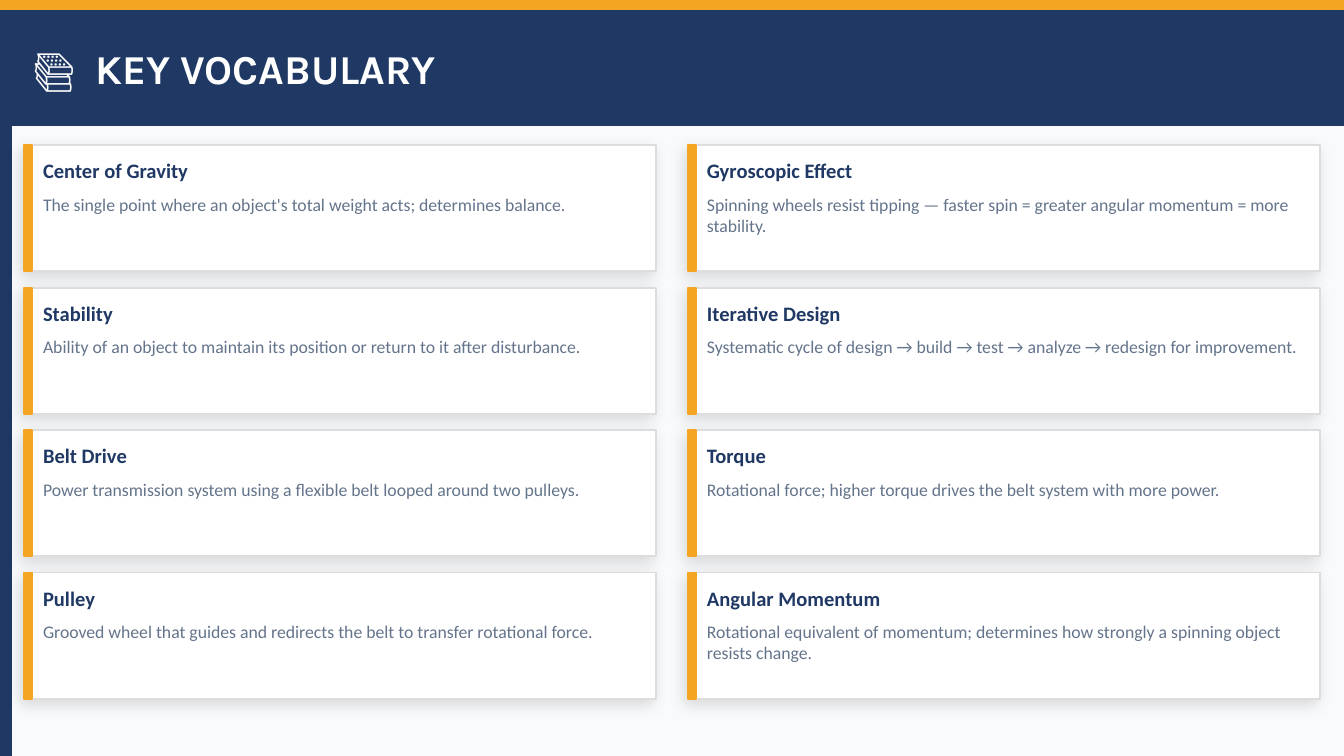
import pptx
import pptx.util
import pptx.dml.color
import pptx.enum.shapes
import pptx.enum.text
import pptx.oxml
import pptx.oxml.ns

# The slide is a grid of square cells, 100 columns by 56.25 rows.
COLS, ROWS = 100, 56.25
CELL = pptx.util.Inches(0.1)
EDGE = 0.8

COLORS = {
    "page": "F8FAFC", "navy": "1F3864", "amber": "F4A522", "white": "FFFFFF",
    "border": "DDDDDD", "slate": "64748B", "shadow": "000000",
}
FORMATS = {
    "title": {"name": "Karla", "size": pptx.util.Pt(22), "bold": True},
    "term": {"name": "Calibri", "size": pptx.util.Pt(11), "bold": True},
    "meaning": {"name": "Calibri", "size": pptx.util.Pt(9.5), "bold": False},
}
TEXT_COLORS = {"title": "white", "term": "navy", "meaning": "slate"}

# One list for each column of cards, from top to bottom.
VOCABULARY = [
    [
        ("Center of Gravity",
         "The single point where an object's total weight acts; determines balance."),
        ("Stability",
         "Ability of an object to maintain its position or return to it after disturbance."),
        ("Belt Drive",
         "Power transmission system using a flexible belt looped around two pulleys."),
        ("Pulley",
         "Grooved wheel that guides and redirects the belt to transfer rotational force."),
    ],
    [
        ("Gyroscopic Effect",
         "Spinning wheels resist tipping — faster spin = greater angular momentum = more stability."),
        ("Iterative Design",
         "Systematic cycle of design → build → test → analyze → redesign for improvement."),
        ("Torque",
         "Rotational force; higher torque drives the belt system with more power."),
        ("Angular Momentum",
         "Rotational equivalent of momentum; determines how strongly a spinning object resists change."),
    ],
]


def rgb(color):
    return pptx.dml.color.RGBColor.from_string(COLORS[color])


def cells(*counts):
    return [round(n * CELL) for n in counts]


def add_rect(s, box, fill, line):
    sp = s.shapes.add_shape(pptx.enum.shapes.MSO_SHAPE.RECTANGLE, *cells(*box))
    sp.shadow.inherit = False
    sp.fill.solid()
    sp.fill.fore_color.rgb = rgb(fill)
    sp.line.color.rgb = rgb(line)
    sp.line.width = pptx.util.Pt(1)
    return sp


def add_shadow(sp):
    """Give a shape a soft shadow towards the lower left."""
    effects = sp._element.spPr.find(pptx.oxml.ns.qn("a:effectLst"))
    effects.append(pptx.oxml.parse_xml(
        f'<a:outerShdw {pptx.oxml.ns.nsdecls("a")} blurRad="{pptx.util.Pt(8)}" '
        f'dist="{pptx.util.Pt(3)}" dir="{135 * 60000}" algn="bl" rotWithShape="0">'
        f'<a:srgbClr val="{COLORS["shadow"]}"><a:alpha val="12000"/></a:srgbClr>'
        '</a:outerShdw>'))


def add_text(s, box, text, role, anchor="MIDDLE", tab=None):
    """Add a text box without margins; tab is a tab stop in columns."""
    tf = s.shapes.add_textbox(*cells(*box)).text_frame
    tf.word_wrap = True
    tf.vertical_anchor = pptx.enum.text.MSO_ANCHOR[anchor]
    for side in ("left", "top", "right", "bottom"):
        setattr(tf, f"margin_{side}", 0)
    p = tf.paragraphs[0]
    if tab:
        p._p.get_or_add_pPr().append(pptx.oxml.parse_xml(
            f'<a:tabLst {pptx.oxml.ns.nsdecls("a")}>'
            f'<a:tab pos="{cells(tab)[0]}" algn="l"/></a:tabLst>'))
    r = p.add_run()
    r.text = text
    for name, value in FORMATS[role].items():
        setattr(r.font, name, value)
    r.font.color.rgb = rgb(TEXT_COLORS[role])


def add_frame(s, x, y, w, h):
    """Draw the amber band along the top and the navy band down the left."""
    add_rect(s, (x, y, w, EDGE), "amber", "amber")
    add_rect(s, (x, y + EDGE, EDGE, h - EDGE), "navy", "navy")


def add_header(s, x, y, w, h):
    add_rect(s, (x, y, w, h), "navy", "navy")
    add_text(s, (x + 1.7, y, w - 4.2, h), "📚\tKEY VOCABULARY", "title", tab=4.62)


def add_card(s, x, y, w, h, term, meaning):
    add_shadow(add_rect(s, (x, y, w, h), "white", "border"))
    add_rect(s, (x, y, 0.6, h), "amber", "amber")
    text_x, text_w = x + 1.4, w - 2.2
    add_text(s, (text_x, y + 0.4, text_w, 3), term, "term")
    add_text(s, (text_x, y + 3.6, text_w, h - 4.2), meaning, "meaning", "TOP")


def add_vocabulary(s, x, y, w, h, col_gap=2.4, row_gap=1.2):
    """Fill the box with an even grid of cards."""
    n_cols, n_rows = len(VOCABULARY), len(VOCABULARY[0])
    card_w = (w - col_gap * (n_cols - 1)) / n_cols
    card_h = (h - row_gap * (n_rows - 1)) / n_rows
    for col, entries in enumerate(VOCABULARY):
        for row, (term, meaning) in enumerate(entries):
            add_card(s, x + col * (card_w + col_gap), y + row * (card_h + row_gap),
                     card_w, card_h, term, meaning)


def main():
    prs = pptx.Presentation()
    prs.slide_width, prs.slide_height = cells(COLS, ROWS)
    s = prs.slides.add_slide(prs.slide_layouts[6])
    s.background.fill.solid()
    s.background.fill.fore_color.rgb = rgb("page")
    add_frame(s, 0, 0, COLS, ROWS)
    add_header(s, EDGE, EDGE, COLS - EDGE, 8.5)
    add_vocabulary(s, 1.8, 10.8, COLS - 3.6, 41.2)
    prs.save("out.pptx")


if __name__ == "__main__":
    main()
